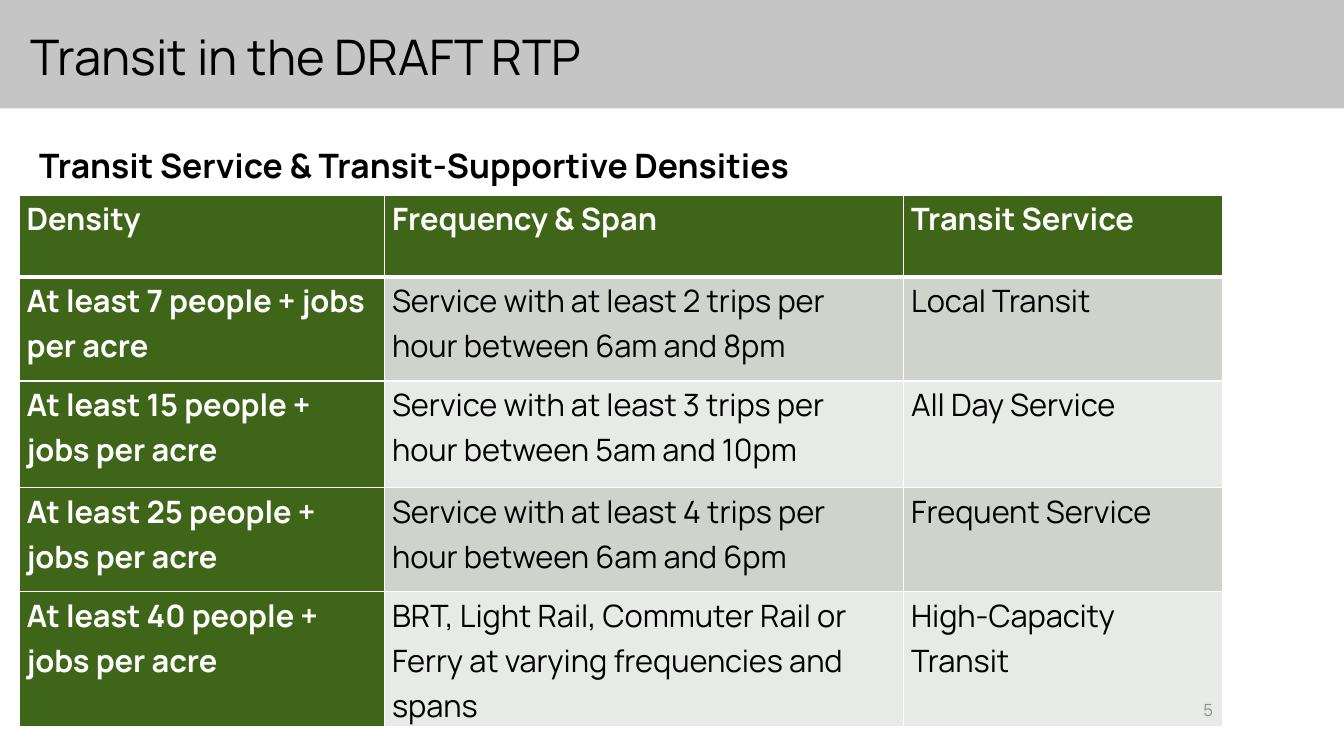
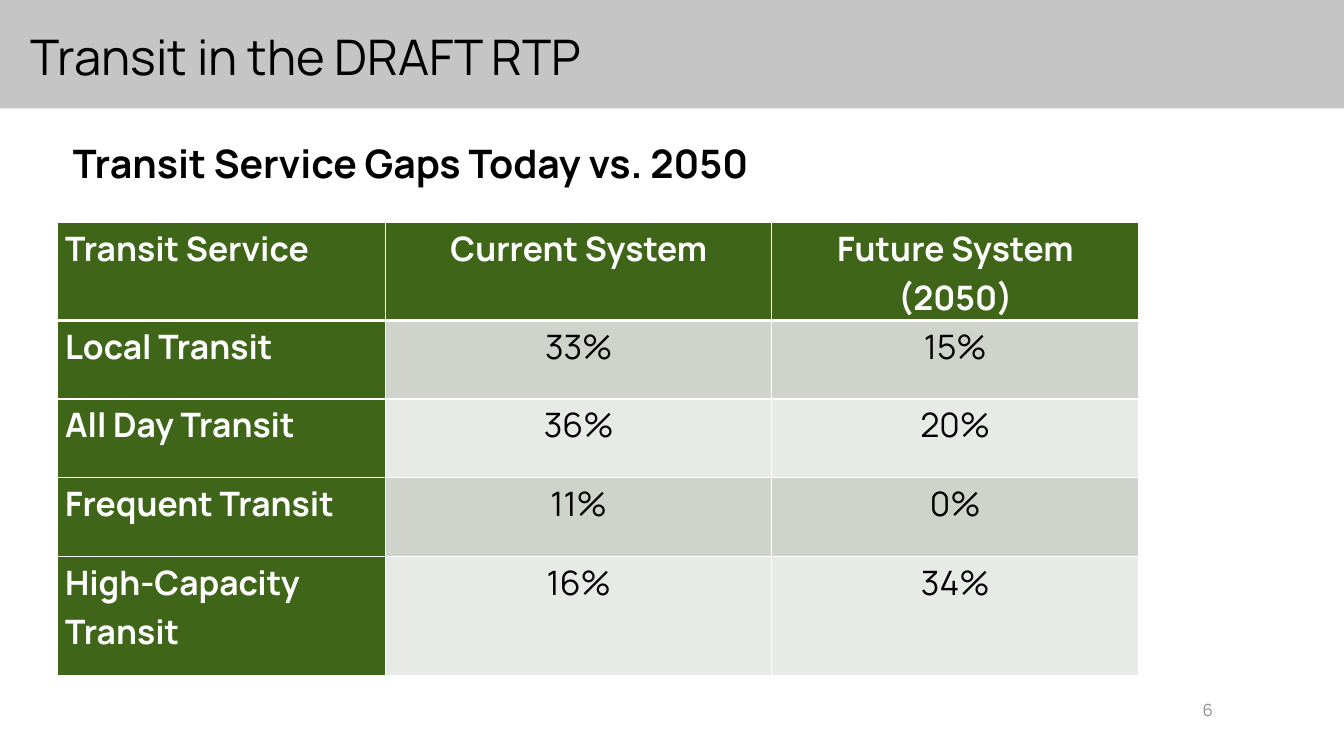
from lxml import etree
from pptx import Presentation
from pptx.dml.color import RGBColor
from pptx.enum.shapes import MSO_SHAPE
from pptx.enum.text import MSO_ANCHOR, MSO_AUTO_SIZE, PP_ALIGN
from pptx.oxml.ns import qn
from pptx.util import Cm, Pt

LEFT, CENTER, RIGHT = PP_ALIGN.LEFT, PP_ALIGN.CENTER, PP_ALIGN.RIGHT
TOP, MIDDLE = MSO_ANCHOR.TOP, MSO_ANCHOR.MIDDLE
FONT = "Manrope"
WIDTH, HEIGHT = 33.87, 19.05
COLORS = {
    "band": "C5C5C5", "head": "3F6618", "odd": "CFD3CC", "even": "E8EAE8",
    "ink": "000000", "paper": "FFFFFF", "page": "8C8C8C",
}
TITLE = "Transit in the DRAFT RTP"

SLIDES = [
    {
        "page": "5",
        "heading": "Transit Service & Transit-Supportive Densities",
        "box": (0.53, 3.42, 19.81, 1.5),
        "heading_size": 24,
        "origin": (0.48, 4.92),
        "cols": [9.21, 13.08, 8.03],
        "heights": [2.06, 2.62, 2.69, 2.62, 2.77],
        "size": 22,
        "aligns": [LEFT, LEFT, LEFT],
        "rows": [
            ("Density", "Frequency & Span", "Transit Service"),
            ("At least 7 people + jobs per acre",
             "Service with at least 2 trips per hour between 6am and 8pm",
             "Local Transit"),
            ("At least 15 people + jobs per acre",
             "Service with at least 3 trips per hour between 5am and 10pm",
             "All Day Service"),
            ("At least 25 people + jobs per acre",
             "Service with at least 4 trips per hour between 6am and 6pm",
             "Frequent Service"),
            ("At least 40 people + jobs per acre",
             "BRT, Light Rail, Commuter Rail or Ferry at varying frequencies and spans",
             "High-Capacity Transit"),
        ],
    },
    {
        "page": "6",
        "heading": "Transit Service Gaps Today vs. 2050",
        "box": (1.19, 3.35, 18.31, 1.5),
        "heading_size": 28,
        "origin": (1.45, 5.6),
        "cols": [8.27, 9.73, 9.25],
        "heights": [1.75, 1.98, 1.98, 1.98, 3],
        "size": 24,
        "aligns": [LEFT, CENTER, CENTER],
        "rows": [
            ("Transit Service", "Current System", "Future System (2050)"),
            ("Local Transit", "33%", "15%"),
            ("All Day Transit", "36%", "20%"),
            ("Frequent Transit", "11%", "0%"),
            ("High-Capacity Transit", "16%", "34%"),
        ],
    },
]


def rgb(name):
    return RGBColor.from_string(COLORS[name])


def write(frame, text, size, color="ink", bold=False, align=LEFT,
          anchor=MIDDLE, wrap=True, line=1.0, after=0):
    frame.word_wrap = wrap
    frame.vertical_anchor = anchor
    frame.text = text
    par = frame.paragraphs[0]
    par.alignment, par.line_spacing = align, line
    par.space_before, par.space_after = Pt(0), Pt(after)
    font = par.runs[0].font
    font.name, font.size, font.bold = FONT, Pt(size), bold
    font.color.rgb = rgb(color)


def add_text(slide, box, text, size, **style):
    shape = slide.shapes.add_textbox(*map(Cm, box))
    write(shape.text_frame, text, size, **style)


def add_band(slide, layout):
    """Draw the title band and move it to the back of the shared layout."""
    band = slide.shapes.add_shape(
        MSO_SHAPE.RECTANGLE, 0, 0, Cm(WIDTH), Cm(2.73))
    band.shadow.inherit = False
    band.fill.solid()
    band.fill.fore_color.rgb = rgb("band")
    band.line.fill.background()
    band.element.nvSpPr.cNvPr.set("id", "20")
    layout.shapes.element.insert(2, band.element)


def add_title(slide):
    title = slide.shapes.title
    title.left, title.top, title.width, title.height = map(
        Cm, (0.52, 0.64, 29.21, 1.7))
    title.text_frame.auto_size = MSO_AUTO_SIZE.NONE
    write(title.text_frame, TITLE, 35, line=0.9)


def set_borders(cell, widths):
    props = cell._tc.get_or_add_tcPr()
    for i, (side, width) in enumerate(widths.items()):
        line = etree.Element(qn(f"a:ln{side}"), w=str(Pt(width)))
        fill = etree.SubElement(line, qn("a:solidFill"))
        etree.SubElement(fill, qn("a:srgbClr"), val=COLORS["paper"])
        props.insert(i, line)


def add_table(slide, data):
    rows, cols, heights = data["rows"], data["cols"], data["heights"]
    left, top = data["origin"]
    table = slide.shapes.add_table(
        len(rows), len(cols), Cm(left), Cm(top),
        Cm(sum(cols)), Cm(sum(heights))).table
    table.horz_banding = False
    for col, width in zip(table.columns, cols):
        col.width = Cm(width)
    for r, texts in enumerate(rows):
        table.rows[r].height = Cm(heights[r])
        for c, text in enumerate(texts):
            cell = table.cell(r, c)
            head = r == 0 or c == 0
            cell.margin_left = cell.margin_right = Cm(0.19)
            cell.margin_top = cell.margin_bottom = 0
            cell.fill.solid()
            cell.fill.fore_color.rgb = rgb(
                "head" if head else "odd" if r % 2 else "even")
            set_borders(cell, {"L": 1, "R": 1, "T": 3 if r == 1 else 1,
                               "B": 3 if r == 0 else 1})
            cell.vertical_anchor = TOP
            write(cell.text_frame, text, data["size"], bold=head,
                  color="paper" if head else "ink", anchor=TOP,
                  align=data["aligns"][c], line=1.07, after=8)


def main():
    deck = Presentation()
    deck.slide_width, deck.slide_height = Cm(WIDTH), Cm(HEIGHT)
    layout = deck.slide_layouts[5]
    for i, data in enumerate(SLIDES):
        slide = deck.slides.add_slide(layout)
        if i == 0:
            add_band(slide, layout)
        add_title(slide)
        add_table(slide, data)
        add_text(slide, data["box"], data["heading"], data["heading_size"],
                 bold=True, align=CENTER, wrap=False)
        add_text(slide, (29.35, 17.38, 1.47, 1.02), data["page"], 12,
                 color="page", align=RIGHT)
    deck.save("out.pptx")


if __name__ == "__main__":
    main()
